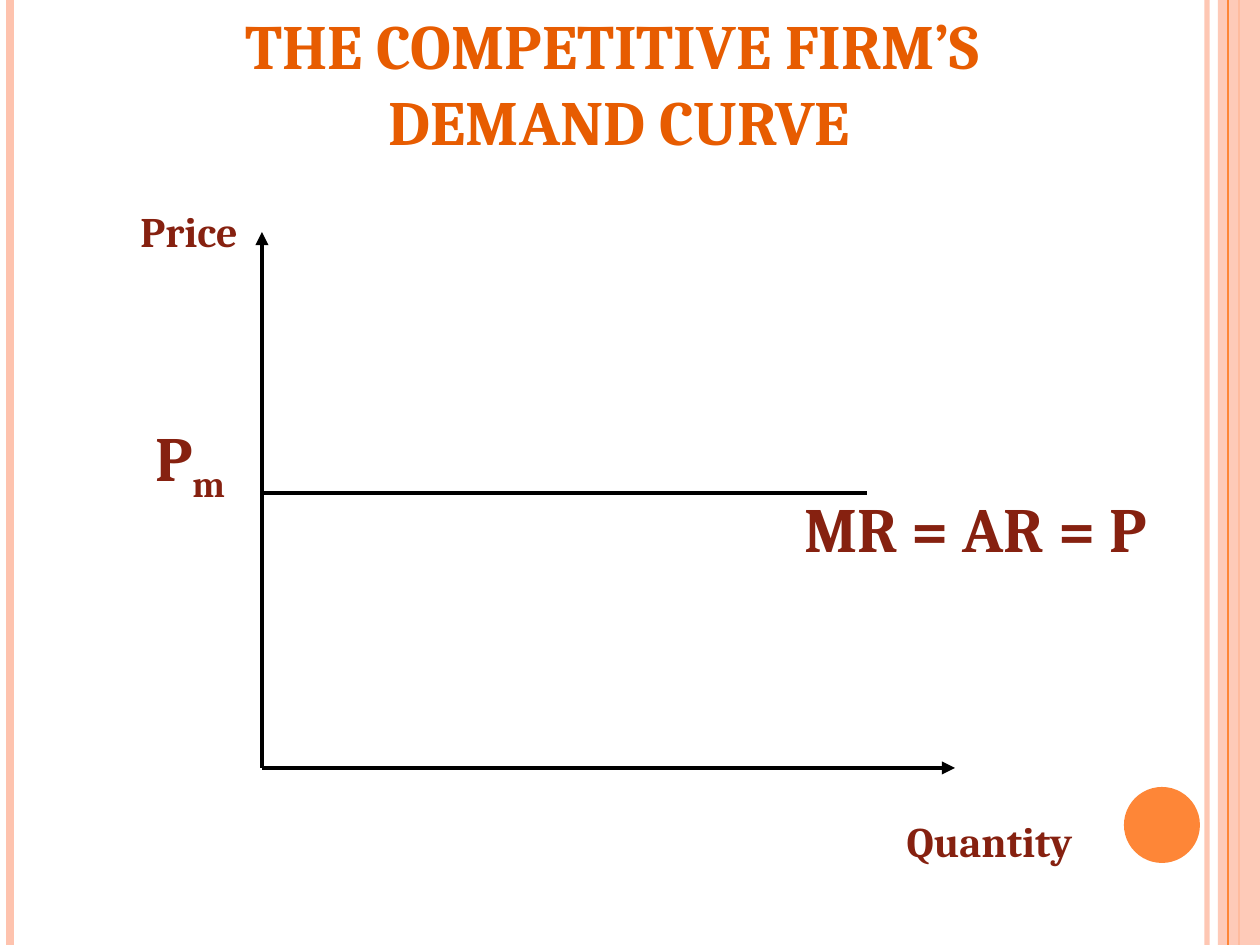
import dataclasses

import pptx
import pptx.dml.color
import pptx.enum.shapes
import pptx.enum.text
import pptx.oxml.ns
import pptx.oxml.xmlchemy
import pptx.util

PX_PER_INCH = 126
SLIDE_W, SLIDE_H = 1260, 945


@dataclasses.dataclass(frozen=True)
class Theme:
    font: str = "Cambria"
    title: str = "E75C01"
    label: str = "862110"
    axis: str = "000000"
    accent: str = "FE8637"
    pale: str = "FEC3AE"
    large: int = 36
    small: int = 24


THEME = Theme()


def px(n):
    return pptx.util.Emu(round(n * pptx.util.Inches(1) / PX_PER_INCH))


def rgb(color):
    return pptx.dml.color.RGBColor.from_string(color)


def add_child(parent, tag, **attributes):
    child = pptx.oxml.xmlchemy.OxmlElement(tag)
    for name, value in attributes.items():
        child.set(name, str(value))
    parent.append(child)


def set_alpha(sp, percent):
    for color in sp._element.spPr.iter(pptx.oxml.ns.qn("a:srgbClr")):
        add_child(color, "a:alpha", val=percent * 1000)


def add_line(slide, start, end, color, width, arrow=False):
    line = slide.shapes.add_connector(
        pptx.enum.shapes.MSO_CONNECTOR.STRAIGHT,
        *map(px, (*start, *end)))
    line.line.color.rgb = rgb(color)
    line.line.width = pptx.util.Pt(width)
    if arrow:
        add_child(line.line._get_or_add_ln(), "a:tailEnd", type="triangle")
    add_child(line._element.spPr, "a:effectLst")
    return line


def add_block(slide, kind, box, color):
    sp = slide.shapes.add_shape(kind, *map(px, box))
    sp.shadow.inherit = False
    sp.fill.solid()
    sp.fill.fore_color.rgb = rgb(color)
    sp.line.fill.background()
    return sp


def style_run(r, size, color):
    r.font.name = THEME.font
    r.font.size = pptx.util.Pt(size)
    r.font.bold = True
    r.font.color.rgb = rgb(color)


def add_text(slide, box, text, size, color, wrap=False, middle=False):
    sp = slide.shapes.add_textbox(*map(px, box))
    tf = sp.text_frame
    tf.text = text
    tf.word_wrap = wrap
    tf.auto_size = pptx.enum.text.MSO_AUTO_SIZE.SHAPE_TO_FIT_TEXT
    if middle:
        tf.vertical_anchor = pptx.enum.text.MSO_ANCHOR.MIDDLE
    for p in tf.paragraphs:
        p.alignment = pptx.enum.text.PP_ALIGN.CENTER
        for r in p.runs:
            style_run(r, size, color)
    return sp


def add_subscript(sp, text, size, color):
    r = sp.text_frame.paragraphs[0].add_run()
    r.text = text
    style_run(r, size, color)
    r.font._element.set("baseline", "-25000")


def add_stripe(slide, x, color, width):
    return add_line(slide, (x, 0), (x, SLIDE_H), color, width)


def draw_decoration(slide):
    shapes = pptx.enum.shapes.MSO_SHAPE
    set_alpha(add_stripe(slide, 1207, THEME.pale, 3), 93)
    add_stripe(slide, 10, THEME.pale, 4.5)
    add_stripe(slide, 1239, THEME.accent, 1.5)
    band = add_block(slide, shapes.RECTANGLE,
                     (1218, 0, SLIDE_W - 1218, SLIDE_H), THEME.pale)
    set_alpha(band, 87)
    add_stripe(slide, 1228, THEME.accent, 0.75)
    add_block(slide, shapes.OVAL, (1124, 787, 76, 76), THEME.accent)


def draw_diagram(slide):
    origin_x, origin_y, price_y = 262, 768, 493
    origin = (origin_x, origin_y)

    # Axes and the horizontal demand curve
    add_line(slide, origin, (origin_x, 232), THEME.axis, 2.5, arrow=True)
    add_line(slide, origin, (955, origin_y), THEME.axis, 2.5, arrow=True)
    add_line(slide, (origin_x, price_y), (867, price_y), THEME.axis, 2.25)

    # Axis and curve labels
    for box, text, size in (
        ((126, 199, 126, 63), "Price", THEME.small),
        ((788, 483, 375, 89), "MR = AR = P", THEME.large),
        ((892, 809, 195, 63), "Quantity", THEME.small),
    ):
        add_text(slide, box, text, size, THEME.label)
    market_price = add_text(slide, (139, 417, 102, 89), "P",
                            THEME.large, THEME.label, middle=True)
    add_subscript(market_price, "m", THEME.large, THEME.label)


def main():
    prs = pptx.Presentation()
    prs.slide_width, prs.slide_height = px(SLIDE_W), px(SLIDE_H)
    slide = prs.slides.add_slide(prs.slide_layouts[6])
    draw_decoration(slide)
    draw_diagram(slide)
    # Title
    add_text(slide, (105, 0, 1029, 165),
             "THE COMPETITIVE FIRM’S \nDEMAND CURVE",
             THEME.large, THEME.title, wrap=True, middle=True)
    prs.save("out.pptx")


if __name__ == "__main__":
    main()
